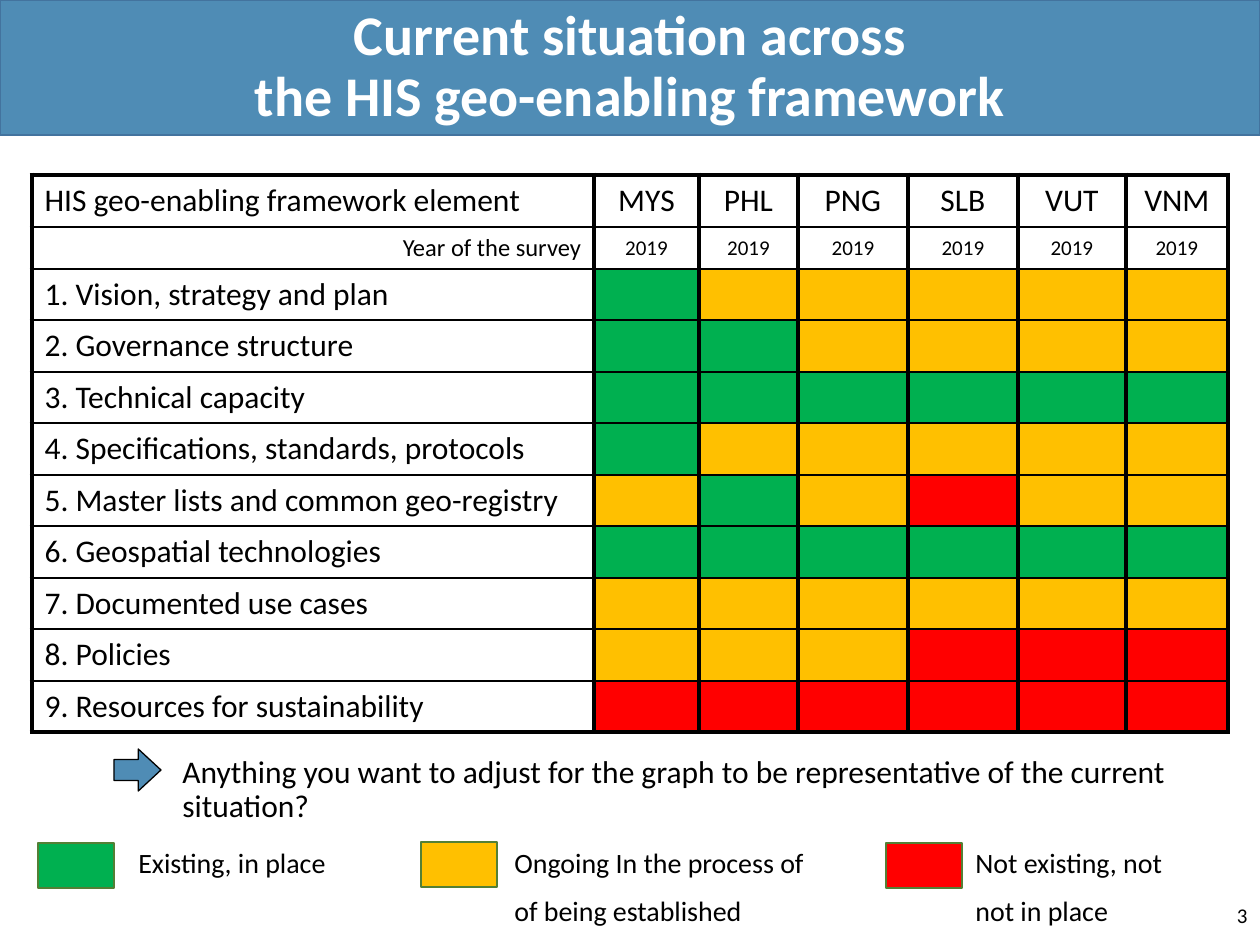
from dataclasses import dataclass

from lxml import etree
from pptx import Presentation
from pptx import util as u
from pptx.dml.color import RGBColor
from pptx.enum import shapes, text
from pptx.oxml.ns import qn

# Content
TITLE = "Current situation across", "the HIS geo-enabling framework"
PAGE_NUMBER = "3"
ELEMENT_HEADING = "HIS geo-enabling framework element"
YEAR_HEADING = "Year of the survey"
SURVEYS = [("MYS", "2019"), ("PHL", "2019"), ("PNG", "2019"),
           ("SLB", "2019"), ("VUT", "2019"), ("VNM", "2019")]
# One letter per country: E existing, O ongoing, N not existing
ELEMENTS = [
    ("1. Vision, strategy and plan", "EOOOOO"),
    ("2. Governance structure", "EEOOOO"),
    ("3. Technical capacity", "EEEEEE"),
    ("4. Specifications, standards, protocols", "EOOOOO"),
    ("5. Master lists and common geo-registry", "OEONOO"),
    ("6. Geospatial technologies", "EEEEEE"),
    ("7. Documented use cases", "OOOOOO"),
    ("8. Policies", "OOONNN"),
    ("9. Resources for sustainability", "NNNNNN"),
]
QUESTION = ("Anything you want to adjust for the graph to be representative "
            "of the current situation?")
LEGEND_LINES = [
    "Existing, in place\tOngoing In the process of\tNot existing, not",
    "\tof being established\tnot in place",
]
LEGEND_TABS = 376, 837
LEGEND_KEYS = [("E", 38, 843), ("O", 421, 842), ("N", 886, 843)]

# Table geometry in px
TABLE_LEFT, TABLE_TOP = 32, 175
COLUMN_WIDTHS = [562, 105, 99, 110, 110, 108, 102]
HEADING_HEIGHTS = [52, 42]
ELEMENTS_HEIGHT = 463


@dataclass(frozen=True)
class Theme:
    font: str = "Calibri"
    black: str = "000000"
    white: str = "FFFFFF"
    blue: str = "4F8CB5"
    blue_edge: str = "43739E"
    key_edge: str = "538035"
    title: int = 32
    body: int = 18
    legend: int = 16
    year_heading: int = 14
    small: int = 12
    thick: int = 3
    thin: int = 1


THEME = Theme()
STATUS_COLOURS = {"E": "00B050", "O": "FFC000", "N": "FF0000"}
CENTER, RIGHT = text.PP_ALIGN.CENTER, text.PP_ALIGN.RIGHT
MIDDLE = text.MSO_ANCHOR.MIDDLE


def px(length):
    return u.Emu(round(length * 914400 / 126))


def colour(value):
    return RGBColor.from_string(value)


def style(paragraph, size, ink=THEME.black, align=None, bold=False):
    font = paragraph.font
    font.name, font.size, font.bold = THEME.font, u.Pt(size), bold
    font.color.rgb = colour(ink)
    paragraph.alignment = align


def add_text(slide, box, lines, size, ink=THEME.black, align=None,
             bold=False, anchor=None, gap=0, spacing=0.9, tabs=()):
    frame = slide.shapes.add_textbox(*map(px, box)).text_frame
    frame.word_wrap = True
    frame.vertical_anchor = anchor
    for i, line in enumerate(lines):
        paragraph = frame.add_paragraph() if i else frame.paragraphs[0]
        paragraph.text = line
        paragraph.line_spacing = spacing
        if i:
            paragraph.space_before = u.Pt(gap)
        if tabs:
            stops = etree.SubElement(paragraph._p.get_or_add_pPr(), qn("a:tabLst"))
            for stop in tabs:
                etree.SubElement(stops, qn("a:tab"), pos=str(px(stop)), algn="l")
        style(paragraph, size, ink, align, bold)


def add_block(slide, kind, box, fill, edge, width=1):
    block = slide.shapes.add_shape(kind, *map(px, box))
    block.shadow.inherit = False
    block.fill.solid()
    block.fill.fore_color.rgb = colour(fill)
    block.line.color.rgb = colour(edge)
    block.line.width = u.Pt(width)
    return block


def add_borders(cell, top, bottom):
    properties = cell._tc.get_or_add_tcPr()
    sides = {"L": THEME.thick, "R": THEME.thick, "T": top, "B": bottom}
    for side, width in sides.items():
        border = etree.SubElement(properties, qn(f"a:ln{side}"), w=str(u.Pt(width)))
        solid = etree.SubElement(border, qn("a:solidFill"))
        etree.SubElement(solid, qn("a:srgbClr"), val=THEME.black)


def add_status_table(slide):
    rows = [
        [ELEMENT_HEADING] + [country for country, _ in SURVEYS],
        [YEAR_HEADING] + [year for _, year in SURVEYS],
    ] + [[name, *statuses] for name, statuses in ELEMENTS]
    count = len(ELEMENTS)
    edges = [round(i * ELEMENTS_HEIGHT / count) for i in range(count + 1)]
    heights = HEADING_HEIGHTS + [b - a for a, b in zip(edges, edges[1:])]
    box = TABLE_LEFT, TABLE_TOP, sum(COLUMN_WIDTHS), sum(heights)
    table = slide.shapes.add_table(
        len(rows), len(COLUMN_WIDTHS), *map(px, box)).table
    table.first_row = table.horz_banding = False
    for column, width in zip(table.columns, COLUMN_WIDTHS):
        column.width = px(width)
    last = len(rows) - 1
    for r, (row, height) in enumerate(zip(rows, heights)):
        table.rows[r].height = px(height)
        for c, value in enumerate(row):
            cell = table.cell(r, c)
            add_borders(cell, THEME.thin if r else THEME.thick,
                        THEME.thick if r == last else THEME.thin)
            cell.fill.solid()
            cell.fill.fore_color.rgb = colour(STATUS_COLOURS.get(value, THEME.white))
            if value in STATUS_COLOURS:
                continue
            cell.text = value
            size, align = THEME.body, CENTER if c else None
            if r == 1:
                size = THEME.small if c else THEME.year_heading
                align = CENTER if c else RIGHT
                if c:
                    cell.vertical_anchor = MIDDLE
            style(cell.text_frame.paragraphs[0], size, align=align)


def main():
    deck = Presentation()
    deck.slide_width, deck.slide_height = px(1260), px(945)
    slide = deck.slides.add_slide(deck.slide_layouts[6])

    # Title band and page number
    rect = shapes.MSO_SHAPE.RECTANGLE
    add_block(slide, rect, (0, 0, 1260, 135), THEME.blue, THEME.blue_edge)
    add_text(slide, (976, 890, 284, 50), [PAGE_NUMBER], THEME.small,
             align=RIGHT, anchor=MIDDLE, spacing=1.0)
    add_text(slide, (87, 20, 1086, 96), TITLE, THEME.title, THEME.white,
             CENTER, bold=True, anchor=MIDDLE)

    add_status_table(slide)

    # Question with its arrow
    add_text(slide, (170, 750, 1060, 45), [QUESTION], THEME.body)
    arrow = add_block(slide, shapes.MSO_SHAPE.RIGHT_ARROW, (114, 749, 47, 42),
                      THEME.blue, THEME.black, 0.75)
    arrow.adjustments[1] = 0.54

    # Legend
    add_text(slide, (126, 843, 1178, 89), LEGEND_LINES, THEME.legend,
             gap=10, tabs=LEGEND_TABS)
    for status, left, top in LEGEND_KEYS:
        add_block(slide, rect, (left, top, 76, 45),
                  STATUS_COLOURS[status], THEME.key_edge)

    deck.save("out.pptx")


if __name__ == "__main__":
    main()
